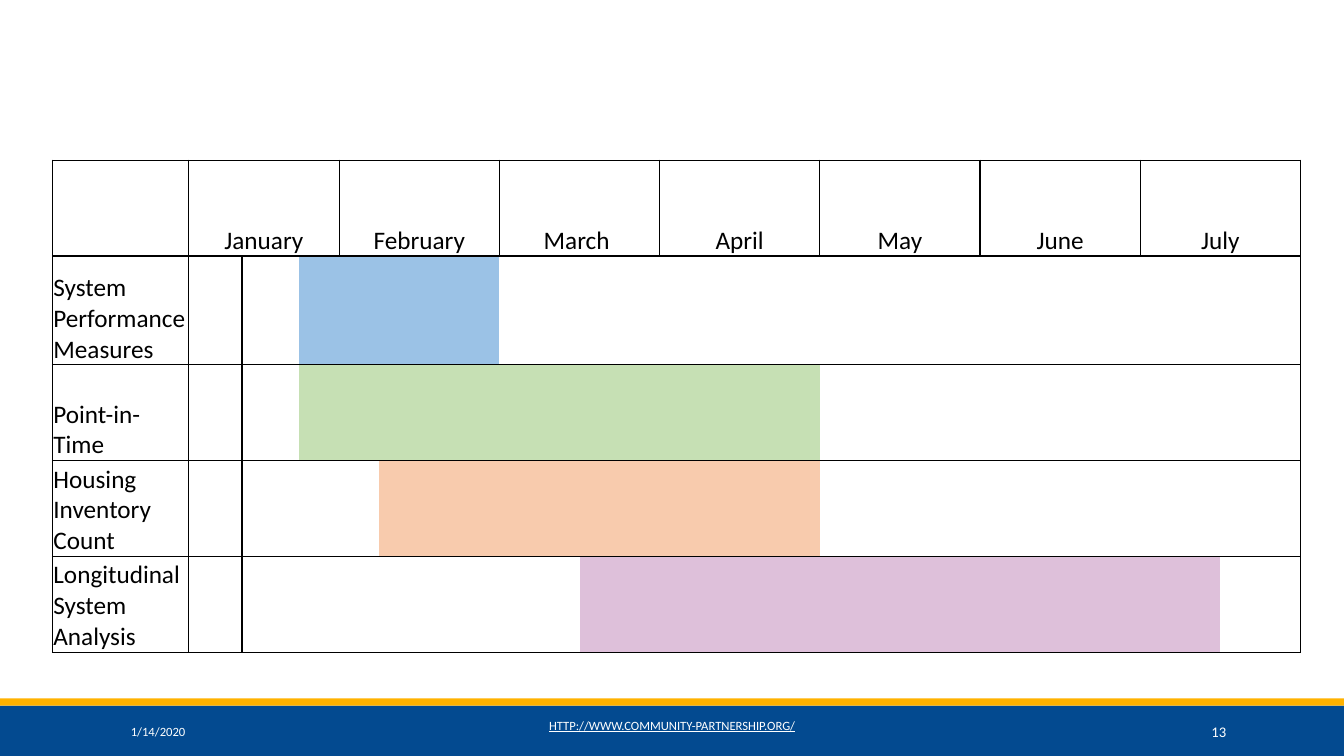
from lxml import etree
from pptx import Presentation
from pptx.dml.color import RGBColor
from pptx.enum.shapes import MSO_SHAPE
from pptx.enum.text import MSO_ANCHOR, PP_ALIGN
from pptx.oxml.ns import qn
from pptx.util import Inches, Pt

RECTANGLE = MSO_SHAPE.RECTANGLE
MIDDLE, BOTTOM = MSO_ANCHOR.MIDDLE, MSO_ANCHOR.BOTTOM
LEFT, CENTER, RIGHT = PP_ALIGN.LEFT, PP_ALIGN.CENTER, PP_ALIGN.RIGHT

# Content
MONTHS = ["January", "February", "March ", "April", "May", "June", "July"]
TASKS = [  # label, first and last filled column, bar colour
    ("System Performance Measures", 4, 8, "9BC2E6"),
    ("Point-in-Time", 4, 16, "C6E0B4"),
    ("Housing Inventory Count", 6, 16, "F8CBAD"),
    ("Longitudinal System Analysis", 11, 26, "DEC0DA"),
]
BANDS = [("blue", 7, 0.5), ("gold", 6.93, 0.07)]  # colour, top, height
FOOTERS = [  # text, left, width, height, alignment, size, underline
    ("1/14/2020", 1.2, 2.7, 0.4, LEFT, "footer", False),
    ("HTTP://WWW.COMMUNITY-PARTNERSHIP.ORG/", 4.03, 5.27, 0.27, CENTER, "footer", True),
    ("13", 10.83, 1.43, 0.4, RIGHT, "number", False),
]

THEME = {
    "font": "Calibri",
    "colors": {"blue": "034A90", "gold": "FFB200", "text": "000000",
               "footer": "FFFFFF", "border": "000000"},
    "sizes": {"table": 18, "footer": 9, "number": 10.5},
    "border": 1,
}

# Geometry
SLIDE_WIDTH, SLIDE_HEIGHT = 13.33, 7.5
TABLE_LEFT, TABLE_TOP, TABLE_WIDTH = 0.52, 1.59, 12.38
ROW_HEIGHTS = [0.95, 1.08, 0.95, 0.95, 0.95]
WEEKS = 4
COLUMN_COUNT = 1 + WEEKS * len(MONTHS)
LEAD_WIDTHS = [1.35, 0.53, 0.17]
EQUAL_COUNT = COLUMN_COUNT - len(LEAD_WIDTHS)
COLUMN_WIDTHS = LEAD_WIDTHS + [(TABLE_WIDTH - sum(LEAD_WIDTHS)) / EQUAL_COUNT] * EQUAL_COUNT
FOOTER_TOP = 7.06
PLAIN_STYLE = "{2D5ABB26-0587-4C30-8999-92F81FD0307C}"
CELL_FORMAT = {"margin_left": Inches(0.01), "margin_right": Inches(0.01),
               "margin_top": Inches(0.01), "margin_bottom": 0,
               "vertical_anchor": BOTTOM}


def color(name):
    return RGBColor.from_string(THEME["colors"][name])


def write(text_frame, text, alignment, size, color_name, underline=None):
    paragraph = text_frame.paragraphs[0]
    paragraph.alignment = alignment
    run = paragraph.add_run()
    run.text = text
    values = {"name": THEME["font"], "size": Pt(THEME["sizes"][size]), "underline": underline}
    for attribute, value in values.items():
        setattr(run.font, attribute, value)
    run.font.color.rgb = color(color_name)


def add_borders(cell, sides):
    properties = cell._tc.get_or_add_tcPr()
    for side in "LRTB":
        if side in sides:
            line = etree.SubElement(properties, qn(f"a:ln{side}"), w=str(Pt(THEME["border"])))
            fill = etree.SubElement(line, qn("a:solidFill"))
            etree.SubElement(fill, qn("a:srgbClr"), val=THEME["colors"]["border"])


def cell_sides(row, column):
    if row == 0 or column == 0:
        return "LRTB"
    return "TB" + ("L" if column == 1 else "") + ("R" if column == COLUMN_COUNT - 1 else "")


def add_bands(slide):
    for color_name, top, height in BANDS:
        band = slide.shapes.add_shape(RECTANGLE, 0, Inches(top), Inches(SLIDE_WIDTH), Inches(height))
        band.shadow.inherit = False
        band.fill.solid()
        band.fill.fore_color.rgb = color(color_name)
        band.line.fill.background()


def add_footers(slide):
    for text, left, width, height, alignment, size, underline in FOOTERS:
        box = slide.shapes.add_textbox(Inches(left), Inches(FOOTER_TOP), Inches(width), Inches(height))
        box.text_frame.word_wrap = True
        box.text_frame.vertical_anchor = MIDDLE
        write(box.text_frame, text, alignment, size, "footer", underline)


def add_schedule(slide):
    frame = slide.shapes.add_table(
        len(ROW_HEIGHTS), COLUMN_COUNT, Inches(TABLE_LEFT), Inches(TABLE_TOP),
        Inches(TABLE_WIDTH), Inches(sum(ROW_HEIGHTS)))
    table = frame.table
    table.horz_banding = False
    table.first_row = False
    table._tbl.tblPr.find(qn("a:tableStyleId")).text = PLAIN_STYLE
    for column, width in zip(table.columns, COLUMN_WIDTHS):
        column.width = Inches(width)
    for row, height in zip(table.rows, ROW_HEIGHTS):
        row.height = Inches(height)

    # Cell margins, borders and bars
    for row in range(len(ROW_HEIGHTS)):
        for column in range(COLUMN_COUNT):
            cell = table.cell(row, column)
            for attribute, value in CELL_FORMAT.items():
                setattr(cell, attribute, value)
            add_borders(cell, cell_sides(row, column))
            cell.fill.background()
            if row > 0:
                label, first, last, bar_color = TASKS[row - 1]
                if first <= column <= last:
                    cell.fill.solid()
                    cell.fill.fore_color.rgb = RGBColor.from_string(bar_color)

    # Month headings and task labels
    for index, month in enumerate(MONTHS):
        start = 1 + index * WEEKS
        heading = table.cell(0, start)
        heading.merge(table.cell(0, start + WEEKS - 1))
        write(heading.text_frame, month, CENTER, "table", "text")
    for row, task in enumerate(TASKS, 1):
        write(table.cell(row, 0).text_frame, task[0], LEFT, "table", "text")


def main():
    presentation = Presentation()
    presentation.slide_width = Inches(SLIDE_WIDTH)
    presentation.slide_height = Inches(SLIDE_HEIGHT)
    slide = presentation.slides.add_slide(presentation.slide_layouts[6])
    add_bands(slide)
    add_footers(slide)
    add_schedule(slide)
    presentation.save("out.pptx")


if __name__ == "__main__":
    main()
